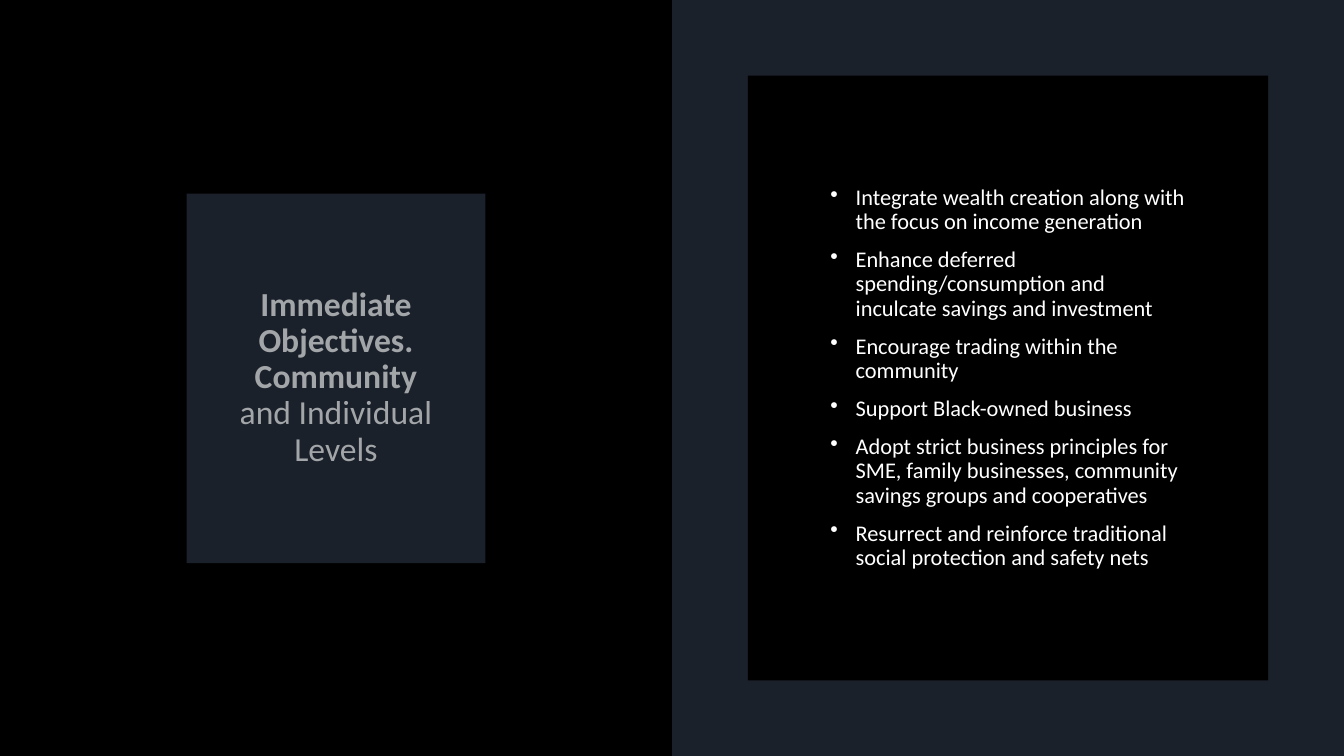
from dataclasses import dataclass

from lxml import etree
from pptx import Presentation, util as u
from pptx.dml import color
from pptx.enum import shapes, text
from pptx.oxml import ns


@dataclass(frozen=True)
class Theme:
    font: str = "Calibri"
    black: str = "000000"
    slate: str = "44546A"
    white: str = "FFFFFF"
    panel_alpha: int = 40
    title_alpha: int = 60
    title_size: int = 24
    body_size: int = 16
    line_spacing: float = 0.9
    bullet_gap: int = 10
    bullet_indent: float = 0.25


class Deck:
    COLS, ROWS = 36, 20

    def __init__(self, theme):
        self.theme = theme
        self.prs = Presentation()
        self.prs.slide_width = u.Inches(13.333)
        self.prs.slide_height = u.Inches(7.5)
        self.s = self.prs.slides.add_slide(self.prs.slide_layouts[6])

    def place(self, col, row, cols, rows):
        dx = self.prs.slide_width / self.COLS
        dy = self.prs.slide_height / self.ROWS
        return [round(v) for v in (col * dx, row * dy, cols * dx, rows * dy)]

    def paint(self, fill, rgb, alpha=100):
        fill.solid()
        fill.fore_color.rgb = color.RGBColor.from_string(rgb)
        if alpha < 100:
            clr = fill._xPr.find(".//" + ns.qn("a:srgbClr"))
            etree.SubElement(clr, ns.qn("a:alpha"), val=str(alpha * 1000))

    def panel(self, grid, rgb, alpha=100):
        sp = self.s.shapes.add_shape(shapes.MSO_SHAPE.RECTANGLE, *self.place(*grid))
        sp.shadow.inherit = False
        sp.line.fill.background()
        self.paint(sp.fill, rgb, alpha)

    def frame(self, grid):
        tf = self.s.shapes.add_textbox(*self.place(*grid)).text_frame
        tf.word_wrap = True
        tf.vertical_anchor = text.MSO_ANCHOR.MIDDLE
        return tf

    def style(self, p, size, alpha=100):
        p.line_spacing = self.theme.line_spacing
        p.font.name = self.theme.font
        p.font.size = u.Pt(size)
        self.paint(p.font.fill, self.theme.white, alpha)

    def title(self, grid, strong, light):
        p = self.frame(grid).paragraphs[0]
        p.alignment = text.PP_ALIGN.CENTER
        self.style(p, self.theme.title_size, self.theme.title_alpha)
        for words, bold in ((strong, True), (light, False)):
            r = p.add_run()
            r.text = words
            r.font.bold = bold

    def bullets(self, grid, items):
        tf = self.frame(grid)
        tf.text = "\n".join(items)
        indent = u.Inches(self.theme.bullet_indent)
        for p in tf.paragraphs:
            self.style(p, self.theme.body_size)
            p.space_before = u.Pt(self.theme.bullet_gap)
            pPr = p._p.get_or_add_pPr()
            pPr.set("marL", str(indent))
            pPr.set("indent", str(-indent))
            bullet = etree.Element(ns.qn("a:buChar"), char="•")
            pPr.find(ns.qn("a:defRPr")).addprevious(bullet)

    def save(self):
        self.prs.save("out.pptx")


def main():
    theme = Theme()
    deck = Deck(theme)
    deck.panel((0, 0, 36, 20), theme.black)
    deck.panel((5, 5.12, 8, 9.78), theme.slate, theme.panel_alpha)
    deck.title((6, 6.11, 6, 7.76), "Immediate Objectives. Community", " and Individual Levels")
    deck.panel((18, 0, 18, 20), theme.slate, theme.panel_alpha)
    deck.panel((20.03, 2, 13.94, 16), theme.black)
    deck.bullets((21.98, 3.87, 10.12, 12.27), [
        "Integrate wealth creation along with the focus on income generation",
        "Enhance deferred spending/consumption and inculcate savings and investment",
        "Encourage trading within the community",
        "Support Black-owned business",
        "Adopt strict business principles for SME, family businesses, community savings groups and cooperatives",
        "Resurrect and reinforce traditional social protection and safety nets",
    ])
    deck.save()


if __name__ == "__main__":
    main()
